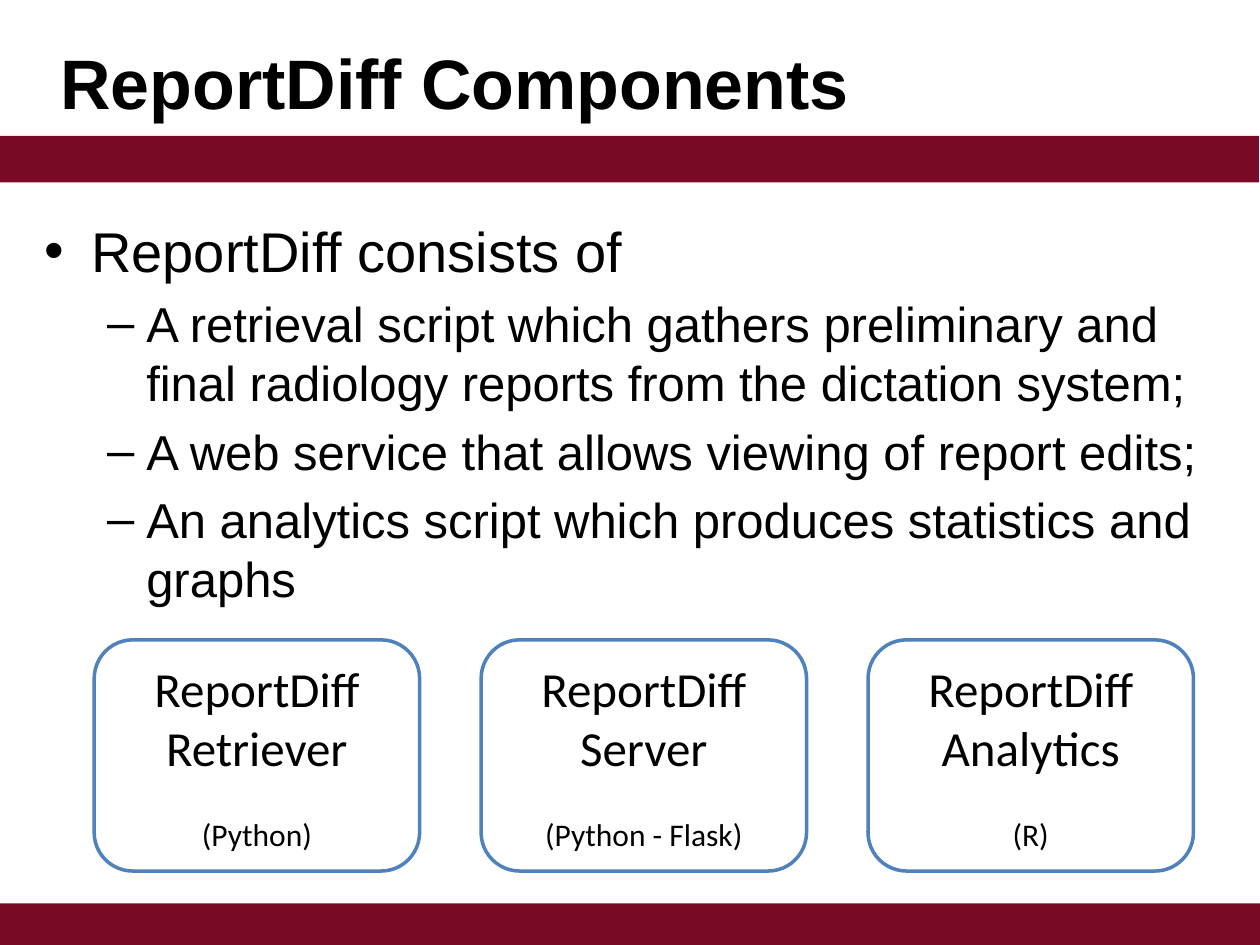
import pptx
import pptx.util
import pptx.dml.color
import pptx.enum.shapes
import pptx.enum.text
import lxml.etree

Cm, Pt = pptx.util.Cm, pptx.util.Pt
KIND = pptx.enum.shapes.MSO_SHAPE
ALIGN = pptx.enum.text.PP_ALIGN
MID = pptx.enum.text.MSO_ANCHOR.MIDDLE

TITLE = "ReportDiff Components"
POINTS = [
    (0, "ReportDiff consists of"),
    (1, "A retrieval script which gathers preliminary and final radiology "
        "reports from the dictation system;"),
    (1, "A web service that allows viewing of report edits;"),
    (1, "An analytics script which produces statistics and graphs"),
]
LEVELS = [
    {"mark": "•", "size": 32, "left": 0.95, "hang": 0.95},
    {"mark": "–", "size": 28, "left": 2.06, "hang": 0.79},
]
PARTS = [("Retriever", "(Python)"), ("Server", "(Python - Flask)"),
         ("Analytics", "(R)")]
BANDS = [(-0.02, 2.74), (0, 18.21)]
COLORS = {"band": "790A26", "edge": "4F81BD", "fill": "FFFFFF",
          "text": "000000"}


def color(name):
    return pptx.dml.color.RGBColor.from_string(COLORS[name])


def style(para, size, face="Arial", bold=False):
    for run in para.runs:
        run.font.size = Pt(size)
        run.font.name = face
        run.font.bold = bold
        run.font.color.rgb = color("text")


def add_box(slide, kind, place, fill, edge=None):
    box = slide.shapes.add_shape(kind, *map(Cm, place))
    box.shadow.inherit = False
    box.fill.solid()
    box.fill.fore_color.rgb = color(fill)
    if edge:
        box.line.color.rgb = color(edge)
        box.line.width = Pt(2)
    else:
        box.line.fill.background()
    return box


def add_text(slide, place, lines):
    frame = slide.shapes.add_textbox(*map(Cm, place)).text_frame
    frame.word_wrap = True
    frame.text = "\n".join(lines)
    return frame


def set_mark(para, level):
    props = para._p.get_or_add_pPr()
    props.set("marL", str(Cm(level["left"])))
    props.set("indent", str(-Cm(level["hang"])))
    space = "{http://schemas.openxmlformats.org/drawingml/2006/main}"
    lxml.etree.SubElement(props, space + "buFont", typeface="Arial")
    lxml.etree.SubElement(props, space + "buChar", char=level["mark"])


def main():
    deck = pptx.Presentation()
    deck.slide_width, deck.slide_height = Cm(25.4), Cm(19.05)
    slide = deck.slides.add_slide(deck.slide_layouts[6])

    for left, top in BANDS:
        add_box(slide, KIND.RECTANGLE, (left, top, 25.4, 0.94), "band")

    body = add_text(slide, (0.64, 4.24, 24.03, 10.36),
                    [text for _, text in POINTS])
    for para, (depth, _) in zip(body.paragraphs, POINTS):
        level = LEVELS[depth]
        para.level = depth
        para.space_before = Pt(level["size"] * 0.2)
        set_mark(para, level)
        style(para, level["size"])

    title = add_text(slide, (0.97, 0.05, 23.7, 3.18), [TITLE])
    title.vertical_anchor = MID
    style(title.paragraphs[0], 40, bold=True)

    for col, (name, tool) in enumerate(PARTS):
        place = (1.9 + col * 7.8, 12.9, 6.56, 4.66)
        box = add_box(slide, KIND.ROUNDED_RECTANGLE, place, "fill", "edge")
        frame = box.text_frame
        frame.word_wrap = True
        frame.vertical_anchor = MID
        frame.text = "\n".join(["ReportDiff", name, tool])
        for para, size in zip(frame.paragraphs, (28, 28, 18)):
            para.alignment = ALIGN.CENTER
            style(para, size, "Calibri")
        frame.paragraphs[-1].space_before = Pt(22)

    deck.save("out.pptx")


if __name__ == "__main__":
    main()
